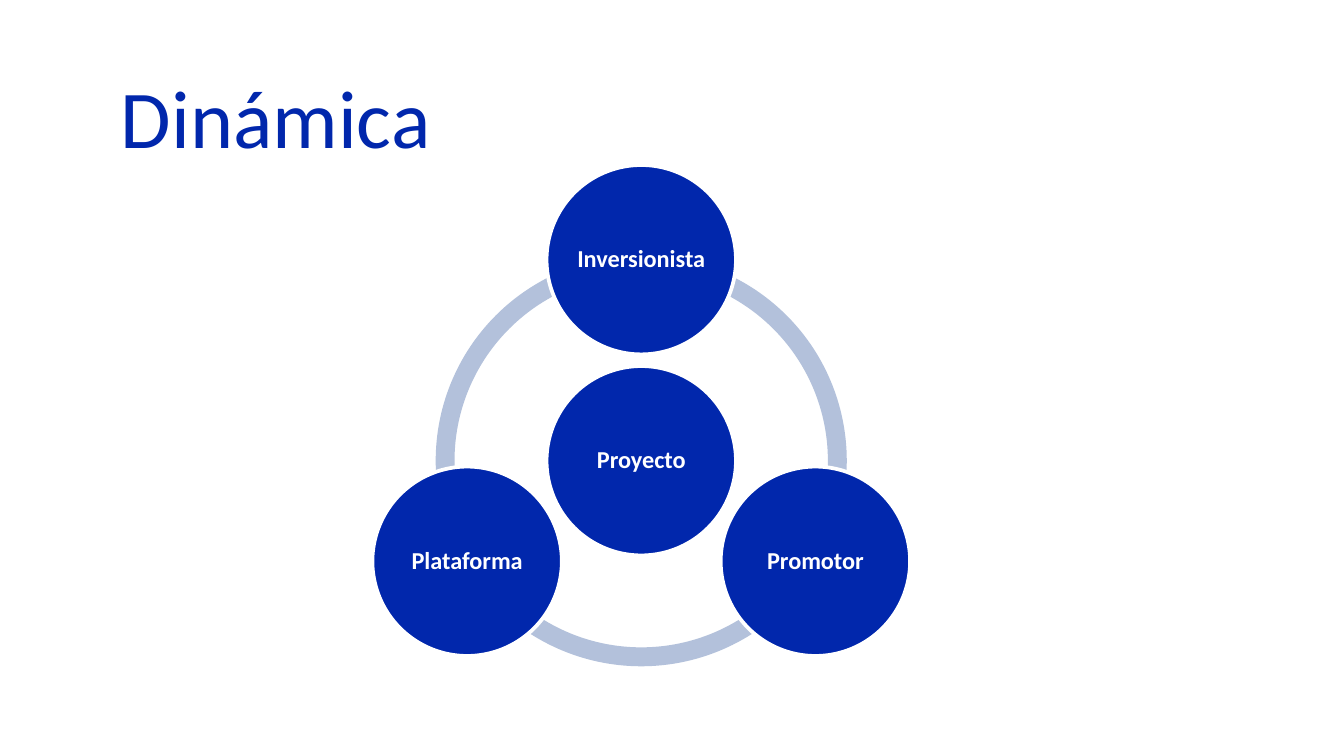
from dataclasses import dataclass
from math import cos, radians, sin

from pptx import Presentation
from pptx.dml.color import RGBColor
from pptx.enum import shapes, text
from pptx.slide import Slide
from pptx.util import Cm, Pt

BLUE = "0127AC"
PALE_BLUE = "B3C1DB"
WHITE = "FFFFFF"
FONT = "Calibri"
TITLE_ONLY = 5

CENTER_X, CENTER_Y = 12.12, 8.71
ORBIT_RADIUS = 3.8
RING_DIAMETER = 7.77
CIRCLE_DIAMETER = 3.58
RING_THICKNESS = 0.046
ANGLE_SCALE = 0.6


@dataclass
class Role:
    label: str
    angle: int


ROLES = [Role("Inversionista", 270), Role("Promotor", 30), Role("Plataforma", 150)]


def color(value: str) -> RGBColor:
    return RGBColor.from_string(value)


def add_round_shape(slide: Slide, kind, x: float, y: float, diameter: float, fill: str):
    shape = slide.shapes.add_shape(
        kind, Cm(x - diameter / 2), Cm(y - diameter / 2), Cm(diameter), Cm(diameter)
    )
    shape.shadow.inherit = False
    shape.fill.solid()
    shape.fill.fore_color.rgb = color(fill)
    return shape


def add_arc(slide: Slide, start: int, end: int) -> None:
    arc = add_round_shape(
        slide, shapes.MSO_SHAPE.BLOCK_ARC, CENTER_X, CENTER_Y, RING_DIAMETER, PALE_BLUE
    )
    arc.line.fill.background()
    arc.adjustments[0] = start * ANGLE_SCALE
    arc.adjustments[1] = end * ANGLE_SCALE
    arc.adjustments[2] = RING_THICKNESS


def add_circle(slide: Slide, label: str, x: float, y: float) -> None:
    circle = add_round_shape(slide, shapes.MSO_SHAPE.OVAL, x, y, CIRCLE_DIAMETER, BLUE)
    circle.line.color.rgb = color(WHITE)
    circle.line.width = Pt(2)
    frame = circle.text_frame
    frame.word_wrap = True
    frame.vertical_anchor = text.MSO_ANCHOR.MIDDLE
    frame.margin_left = frame.margin_right = Cm(0.05)
    frame.margin_top = frame.margin_bottom = Cm(0.05)
    paragraph = frame.paragraphs[0]
    paragraph.text = label
    paragraph.alignment = text.PP_ALIGN.CENTER
    paragraph.line_spacing = 0.9
    paragraph.font.name = FONT
    paragraph.font.size = Pt(13)
    paragraph.font.bold = True
    paragraph.font.color.rgb = color(WHITE)


def format_title(slide: Slide, label: str) -> None:
    title = slide.shapes.title
    title.left, title.top = Cm(2.03), Cm(1.12)
    title.width, title.height = Cm(6.43), Cm(2.13)
    frame = title.text_frame
    frame.word_wrap = False
    frame.auto_size = text.MSO_AUTO_SIZE.SHAPE_TO_FIT_TEXT
    frame.vertical_anchor = text.MSO_ANCHOR.TOP
    paragraph = frame.paragraphs[0]
    paragraph.text = label
    paragraph.alignment = text.PP_ALIGN.LEFT
    paragraph.font.name = FONT
    paragraph.font.size = Pt(44)
    paragraph.font.color.rgb = color(BLUE)


def main() -> None:
    presentation = Presentation()
    presentation.slide_width, presentation.slide_height = Cm(25.4), Cm(14.29)
    slide = presentation.slides.add_slide(presentation.slide_layouts[TITLE_ONLY])
    format_title(slide, "Dinámica")

    for role in ROLES:
        add_arc(slide, role.angle, (role.angle + 120) % 360)

    add_circle(slide, "Proyecto", CENTER_X, CENTER_Y)
    for role in ROLES:
        angle = radians(role.angle)
        add_circle(
            slide,
            role.label,
            CENTER_X + ORBIT_RADIUS * cos(angle),
            CENTER_Y + ORBIT_RADIUS * sin(angle),
        )

    presentation.save("out.pptx")


if __name__ == "__main__":
    main()
